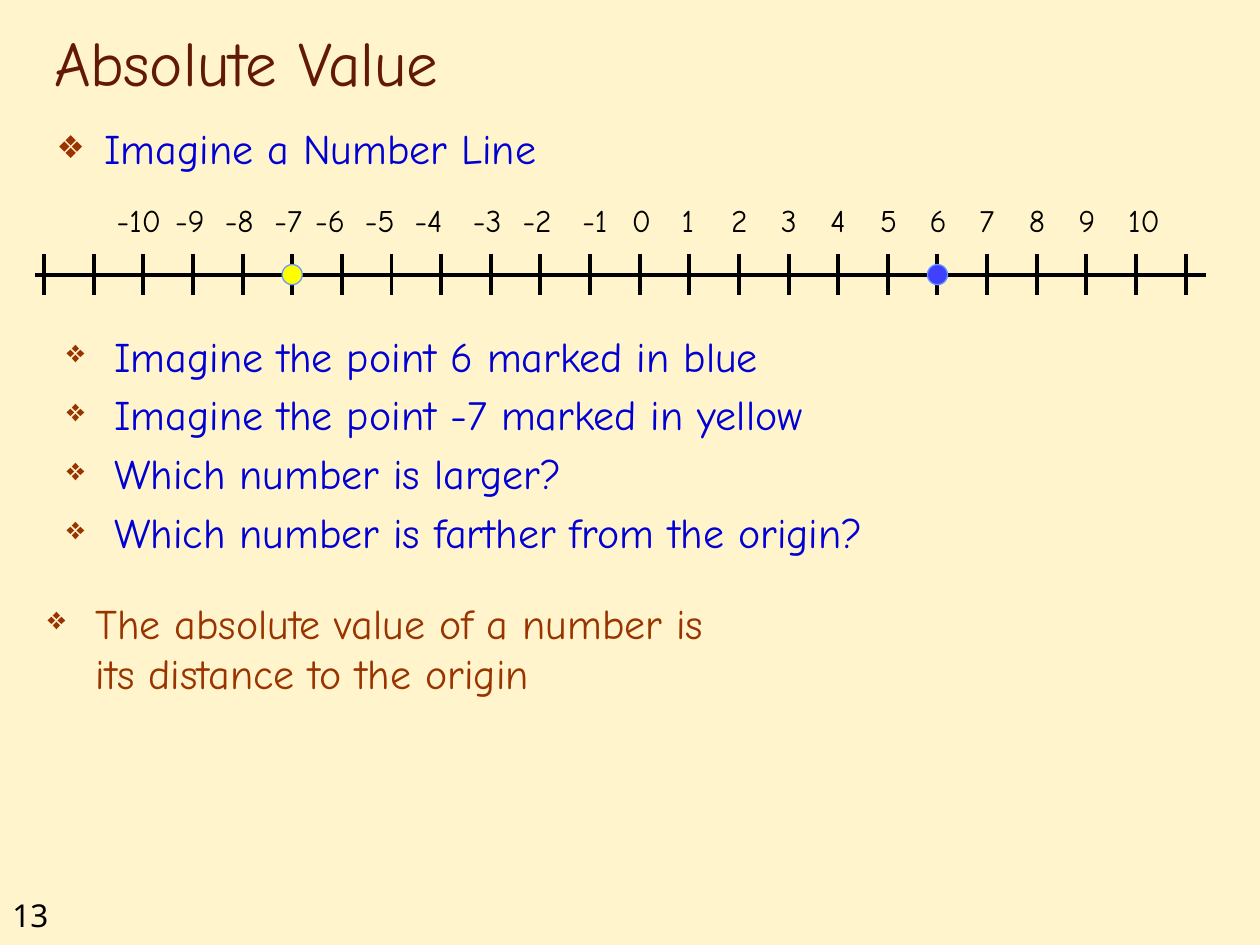
from dataclasses import dataclass

import lxml.etree
import pptx
import pptx.dml.color
import pptx.enum.shapes
import pptx.enum.text
import pptx.oxml.ns
import pptx.util

Inches = pptx.util.Inches
qn = pptx.oxml.ns.qn


@dataclass(frozen=True)
class Theme:
    background: str = "FFF2C0"
    background_alpha: int = 82
    title: str = "631908"
    body: str = "0000D4"
    accent: str = "993300"
    ink: str = "000000"
    blue_point: str = "4040FF"
    yellow_point: str = "FFFF00"
    point_edge: str = "6699FF"
    font: str = "Comic Neue"
    number_font: str = "Noto Sans"
    title_size: int = 36
    body_size: int = 24
    label_size: int = 18


THEME = Theme()
NEGATIVE_LABELS = {
    -10: (0.31, 0.63), -9: (0.24, 0.47), -8: (0.24, 0.47), -7: (0.24, 0.63),
    -6: (0.31, 0.47), -5: (0.31, 0.55), -4: (0.31, 0.55), -3: (0.24, 0.55),
    -2: (0.24, 0.47), -1: (0.16, 0.55),
}


def rgb(value):
    return pptx.dml.color.RGBColor.from_string(value)


def place(holder, box):
    holder.left, holder.top, holder.width, holder.height = map(Inches, box)
    return holder


def add_element(parent, tag, **attributes):
    return lxml.etree.SubElement(parent, qn(tag), attributes)


def add_bullet(paragraph):
    paragraph.space_before = pptx.util.Pt(THEME.body_size * 0.2)
    properties = paragraph._p.get_or_add_pPr()
    properties.set("marL", str(Inches(0.38)))
    properties.set("indent", str(Inches(-0.38)))
    add_element(add_element(properties, "a:buClr"), "a:srgbClr", val=THEME.accent)
    add_element(properties, "a:buSzPct", val="75000")
    add_element(properties, "a:buChar", char="❖")


def write(holder, *lines, size, color, font=THEME.font, bullets=False,
          anchor=pptx.enum.text.MSO_ANCHOR.TOP, grow=False):
    frame = holder.text_frame
    sizing = pptx.enum.text.MSO_AUTO_SIZE
    frame.word_wrap = True
    frame.auto_size = sizing.SHAPE_TO_FIT_TEXT if grow else sizing.NONE
    frame.vertical_anchor = anchor
    for index, line in enumerate(lines):
        paragraph = frame.add_paragraph() if index else frame.paragraphs[0]
        paragraph.text = line
        paragraph.alignment = pptx.enum.text.PP_ALIGN.LEFT
        if bullets:
            add_bullet(paragraph)
        for run in paragraph.runs:
            run.font.size = pptx.util.Pt(size)
            run.font.name = font
            run.font.color.rgb = rgb(color)


def text_box(shapes, box, *lines, **text_format):
    write(shapes.add_textbox(*map(Inches, box)), *lines, **text_format)


def bullet_list(shapes, box, *lines, color=THEME.body):
    text_box(shapes, box, *lines, size=THEME.body_size, color=color, bullets=True)


def rule(shapes, *ends):
    line = shapes.add_connector(
        pptx.enum.shapes.MSO_CONNECTOR.STRAIGHT, *map(Inches, ends))
    line.line.color.rgb = rgb(THEME.ink)
    line.line.width = pptx.util.Pt(2.25)
    add_element(line._element.spPr, "a:effectLst")


def point(shapes, x, y, color, diameter=0.16):
    corner = (x - diameter / 2, y - diameter / 2, diameter, diameter)
    dot = shapes.add_shape(
        pptx.enum.shapes.MSO_SHAPE.OVAL, *map(Inches, corner))
    dot.shadow.inherit = False
    dot.fill.solid()
    dot.fill.fore_color.rgb = rgb(color)
    dot.line.color.rgb = rgb(THEME.point_edge)
    dot.line.width = pptx.util.Pt(0.75)


def number_line(shapes, box):
    left, top, width, height = box
    first, last = -12, 11
    first_tick = left + 0.07
    step = (width - 0.23) / (last - first)
    axis_y = top + height - 0.16

    def tick_x(value):
        return first_tick + (value - first) * step

    scale = shapes.add_group_shape().shapes
    rule(scale, left, axis_y, left + width, axis_y)
    for value in range(first, last + 1):
        x = tick_x(value)
        rule(scale, x, axis_y - 0.16, x, axis_y + 0.16)
        if -10 <= value <= 10:
            usual = (0.16, 0.47 if value == 10 else 0.39)
            shift, label_width = NEGATIVE_LABELS.get(value, usual)
            text_box(scale, (x - shift, top, label_width, 0.4), str(value),
                     size=THEME.label_size, color=THEME.ink, grow=True)

    point(shapes, tick_x(6), axis_y, THEME.blue_point)
    point(shapes, tick_x(-7), axis_y, THEME.yellow_point)


def heading(slide, title_box, body_box):
    write(place(slide.shapes.title, title_box), "Absolute Value",
          size=THEME.title_size, color=THEME.title,
          anchor=pptx.enum.text.MSO_ANCHOR.BOTTOM)
    write(place(slide.placeholders[1], body_box), "Imagine a Number Line",
          size=THEME.body_size, color=THEME.body, bullets=True)


def paint_background(slide):
    fill = slide.background.fill
    fill.solid()
    fill.fore_color.rgb = rgb(THEME.background)
    color = next(slide.element.iter(qn("a:srgbClr")))
    add_element(color, "a:alpha", val=str(THEME.background_alpha * 1000))


def main():
    deck = pptx.Presentation()
    deck.slide_width, deck.slide_height = Inches(10), Inches(7.5)
    slide = deck.slides.add_slide(deck.slide_layouts[1])
    paint_background(slide)
    text_box(slide.shapes, (0, 7.06, 0.75, 0.4), "13", size=THEME.label_size,
             color=THEME.ink, font=THEME.number_font, grow=True)
    heading(slide, (0.33, 0.17, 8.5, 0.67), (0.35, 0.92, 9.21, 0.63))
    bullet_list(slide.shapes, (0.43, 2.57, 9.21, 2.05),
                "Imagine the point 6 marked in blue",
                "Imagine the point -7 marked in yellow",
                "Which number is larger?",
                "Which number is farther from the origin?")
    bullet_list(slide.shapes, (0.28, 4.69, 6.06, 0.94),
                "The absolute value of a number is \nits distance to the origin",
                color=THEME.accent)
    number_line(slide.shapes, (0.28, 1.55, 9.29, 0.79))
    deck.save("out.pptx")


if __name__ == "__main__":
    main()
